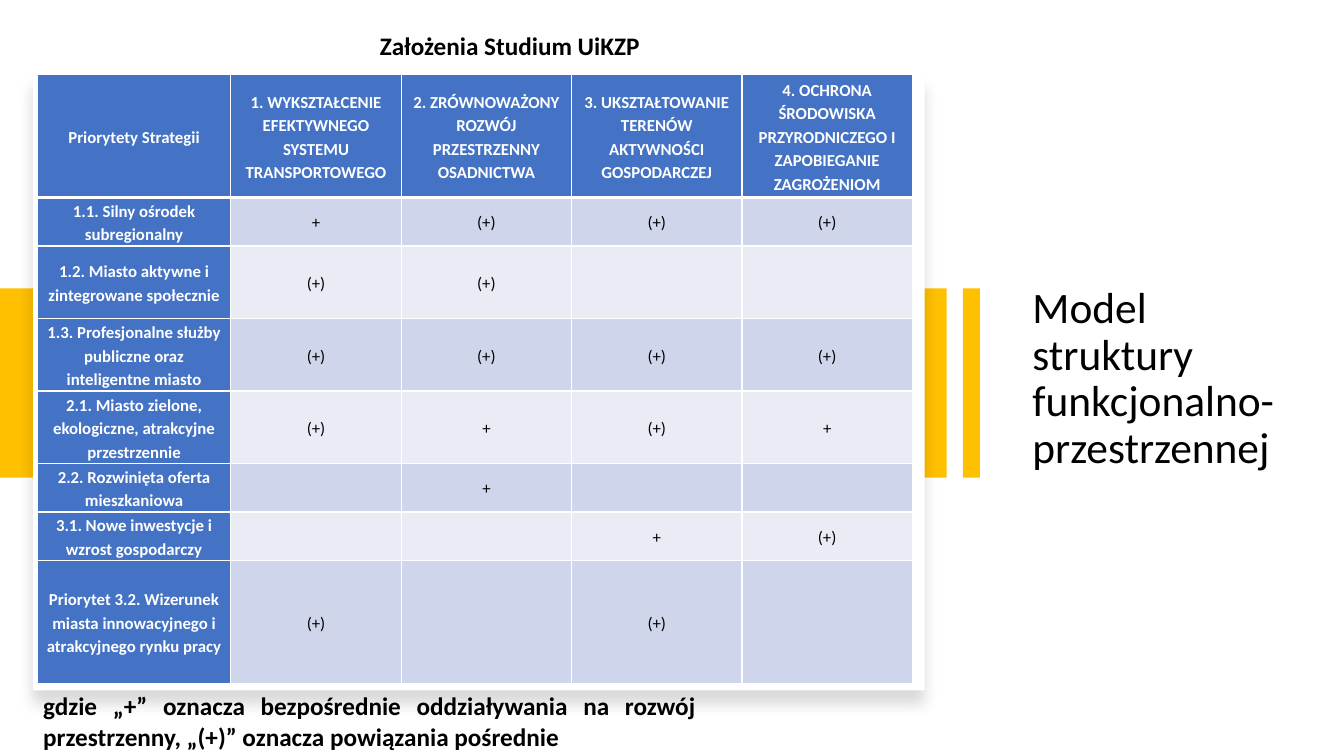
from dataclasses import dataclass

import pptx
import pptx.dml.color
import pptx.enum.shapes
import pptx.enum.text
import pptx.oxml
import pptx.oxml.ns
import pptx.util

RGBColor = pptx.dml.color.RGBColor
Inches = pptx.util.Inches
Pt = pptx.util.Pt
ALIGN = pptx.enum.text.PP_ALIGN
ANCHOR = pptx.enum.text.MSO_ANCHOR
AUTO_SIZE = pptx.enum.text.MSO_AUTO_SIZE

BLACK = RGBColor(0x00, 0x00, 0x00)
WHITE = RGBColor(0xFF, 0xFF, 0xFF)
GOLD = RGBColor(0xFF, 0xC0, 0x00)
BLUE = RGBColor(0x44, 0x72, 0xC4)
BANDS = (RGBColor(0xCF, 0xD5, 0xEA), RGBColor(0xE9, 0xEB, 0xF5))
FONT = "Calibri"


@dataclass
class Box:
    left: float
    top: float
    width: float
    height: float

    def emu(self) -> list[int]:
        return [Inches(v) for v in (self.left, self.top, self.width, self.height)]


@dataclass
class Block:
    box: Box
    fill: RGBColor


@dataclass
class Caption:
    box: Box
    text: str


BAR = Block(Box(0, 2.86, 9.39, 1.88), GOLD)
CARD = Block(Box(0.33, 0.73, 8.84, 6.12), WHITE)
STRIPE = Block(Box(9.55, 2.86, 0.17, 1.88), GOLD)
TITLE = Caption(Box(10.14, 2.21, 2.7, 3.11), "Model struktury funkcjonalno-przestrzennej")
CAPTIONS = (
    Caption(Box(0.33, 6.78, 6.67, 0.72),
            "gdzie „+” oznacza bezpośrednie oddziaływania na rozwój przestrzenny, "
            "„(+)” oznacza powiązania pośrednie"),
    Caption(Box(3.67, 0.24, 3.17, 0.41), "Założenia Studium UiKZP"),
)
TABLE_BOX = Box(0.37, 0.74, 8.68, 6.04)
COL_WIDTHS = (1.92, 1.69, 1.69, 1.69, 1.69)
ROW_HEIGHTS = (1.22, 0.48, 0.72, 0.72, 0.72, 0.48, 0.48, 1.22)
ROWS = (
    ("Priorytety Strategii",
     "1. WYKSZTAŁCENIE EFEKTYWNEGO SYSTEMU TRANSPORTOWEGO",
     "2. ZRÓWNOWAŻONY ROZWÓJ PRZESTRZENNY OSADNICTWA",
     "3. UKSZTAŁTOWANIE TERENÓW AKTYWNOŚCI GOSPODARCZEJ",
     "4. OCHRONA ŚRODOWISKA PRZYRODNICZEGO I ZAPOBIEGANIE ZAGROŻENIOM"),
    ("1.1. Silny ośrodek subregionalny", "+", "(+)", "(+)", "(+)"),
    ("1.2. Miasto aktywne i zintegrowane społecznie", "(+)", "(+)", "", ""),
    ("1.3. Profesjonalne służby publiczne oraz inteligentne miasto",
     "(+)", "(+)", "(+)", "(+)"),
    ("2.1. Miasto zielone, ekologiczne, atrakcyjne przestrzennie",
     "(+)", "+", "(+)", "+"),
    ("2.2. Rozwinięta oferta mieszkaniowa", "", "+", "", ""),
    ("3.1. Nowe inwestycje i wzrost gospodarczy", "", "", "+", "(+)"),
    ("Priorytet 3.2. Wizerunek miasta innowacyjnego i atrakcyjnego rynku pracy",
     "(+)", "", "(+)", ""),
)


def set_attrs(obj, values: dict) -> None:
    for name, value in values.items():
        setattr(obj, name, value)


def write(p, text: str, size: int, color: RGBColor, bold: bool, **layout) -> None:
    set_attrs(p, layout)
    if text:
        r = p.add_run()
        r.text = text
        set_attrs(r.font, {"name": FONT, "size": Pt(size), "bold": bold})
        r.font.color.rgb = color


def add_block(s, block: Block):
    sp = s.shapes.add_shape(pptx.enum.shapes.MSO_SHAPE.RECTANGLE, *block.box.emu())
    sp.shadow.inherit = False
    sp.fill.solid()
    sp.fill.fore_color.rgb = block.fill
    sp.line.fill.background()
    return sp


def add_soft_shadow(sp) -> None:
    effects = sp._element.spPr.find(pptx.oxml.ns.qn("a:effectLst"))
    effects.append(pptx.oxml.parse_xml(
        f'<a:outerShdw {pptx.oxml.ns.nsdecls("a")} blurRad="{Pt(11)}" dist="{Pt(10)}" '
        f'dir="5400000" algn="t" rotWithShape="0"><a:srgbClr val="{BLACK}">'
        '<a:alpha val="15000"/></a:srgbClr></a:outerShdw>'))


def add_caption(s, caption: Caption) -> None:
    tf = s.shapes.add_textbox(*caption.box.emu()).text_frame
    set_attrs(tf, {"word_wrap": True, "auto_size": AUTO_SIZE.SHAPE_TO_FIT_TEXT})
    write(tf.paragraphs[0], caption.text, 18, BLACK, True,
          alignment=ALIGN.JUSTIFY, line_spacing=1.05, space_after=Pt(8))


def add_borders(cell, bottom: int) -> None:
    tc_pr = cell._tc.get_or_add_tcPr()
    for side, width in {"L": 1, "R": 1, "T": 1, "B": bottom}.items():
        tc_pr.append(pptx.oxml.parse_xml(
            f'<a:ln{side} {pptx.oxml.ns.nsdecls("a")} w="{Pt(width)}"><a:solidFill>'
            f'<a:srgbClr val="{WHITE}"/></a:solidFill></a:ln{side}>'))


def add_matrix(s) -> None:
    table = s.shapes.add_table(len(ROWS), len(COL_WIDTHS), *TABLE_BOX.emu()).table
    table.first_col = True
    for column, width in zip(table.columns, COL_WIDTHS):
        column.width = Inches(width)
    for i, (height, texts) in enumerate(zip(ROW_HEIGHTS, ROWS)):
        table.rows[i].height = Inches(height)
        for j, text in enumerate(texts):
            cell = table.cell(i, j)
            heading = i == 0 or j == 0
            set_attrs(cell, {"margin_left": Inches(0.07), "margin_right": Inches(0.07),
                             "margin_top": 0, "margin_bottom": 0,
                             "vertical_anchor": ANCHOR.MIDDLE})
            add_borders(cell, 3 if i == 0 else 1)
            cell.fill.solid()
            cell.fill.fore_color.rgb = BLUE if heading else BANDS[(i - 1) % 2]
            write(cell.text_frame.paragraphs[0], text, 12,
                  WHITE if heading else BLACK, heading,
                  alignment=ALIGN.CENTER, line_spacing=1.15, space_after=Pt(8))


def add_title(s) -> None:
    sp = s.shapes.title
    set_attrs(sp, dict(zip(("left", "top", "width", "height"), TITLE.box.emu())))
    tf = sp.text_frame
    set_attrs(tf, {"word_wrap": True, "auto_size": AUTO_SIZE.NONE,
                   "vertical_anchor": ANCHOR.MIDDLE})
    write(tf.paragraphs[0], TITLE.text, 31, BLACK, False,
          alignment=ALIGN.LEFT, line_spacing=0.9)


def main() -> None:
    prs = pptx.Presentation()
    set_attrs(prs, {"slide_width": Inches(13.33), "slide_height": Inches(7.5)})
    s = prs.slides.add_slide(prs.slide_layouts[5])
    add_title(s)
    add_block(s, BAR)
    add_soft_shadow(add_block(s, CARD))
    add_block(s, STRIPE)
    add_matrix(s)
    for caption in CAPTIONS:
        add_caption(s, caption)
    prs.save("out.pptx")


if __name__ == "__main__":
    main()
